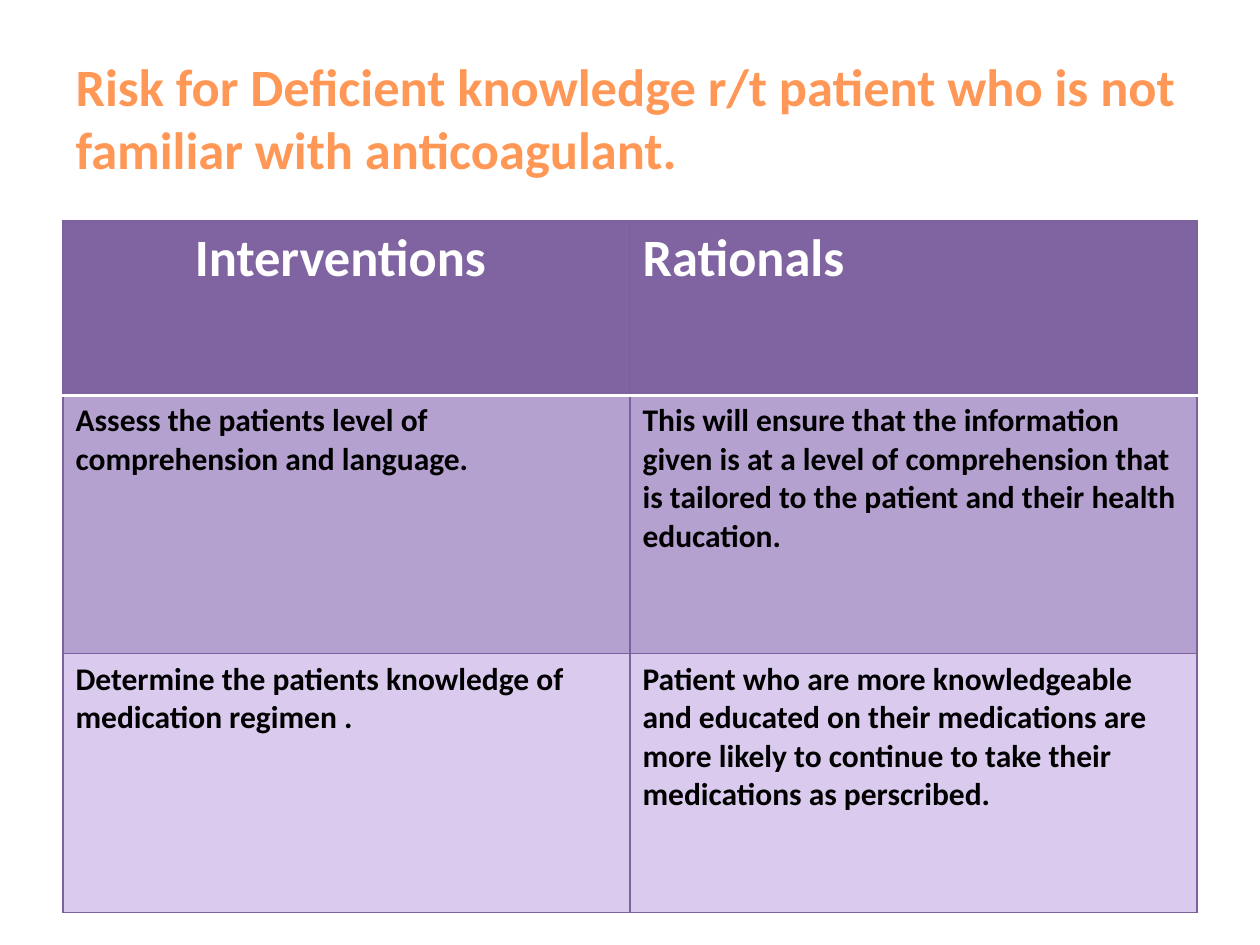
from lxml import etree
from pptx import Presentation
from pptx.dml.color import RGBColor
from pptx.enum.text import MSO_ANCHOR, PP_ALIGN
from pptx.oxml.ns import qn
from pptx.util import Inches, Pt

LEFT, CENTER = PP_ALIGN.LEFT, PP_ALIGN.CENTER
MIDDLE = MSO_ANCHOR.MIDDLE
TITLE_ONLY = 5

ORANGE = RGBColor(0xFF, 0x98, 0x56)
PURPLE = RGBColor(0x80, 0x64, 0xA2)
MID_PURPLE = RGBColor(0xB5, 0xA1, 0xD0)
PALE_PURPLE = RGBColor(0xD9, 0xCA, 0xEE)
BORDER_PURPLE = RGBColor(0x7D, 0x60, 0xA0)
WHITE = RGBColor(0xFF, 0xFF, 0xFF)
BLACK = RGBColor(0, 0, 0)

HEADING = {"name": "Calibri", "size": Pt(30), "bold": True}
BODY = {"name": "Calibri", "size": Pt(18), "bold": True}

THIN = (BORDER_PURPLE, 0.75)
RULE = (WHITE, 2)

ROWS = [
    ("Interventions ", "Rationals"),
    ("Assess the patients level of comprehension and language.",
     "This will ensure that the information given is at a level of comprehension "
     "that is tailored to the patient and their health education."),
    ("Determine the patients knowledge of medication regimen .",
     "Patient who are more knowledgeable and educated on their medications are "
     "more likely to continue to take their medications as perscribed."),
]
ROW_FILLS = [PURPLE, MID_PURPLE, PALE_PURPLE]
ROW_HEIGHTS = [1.39, 2.05, 2.05]


class SlideBuilder:
    """Holds the style and the current slide; places items by shares of its size."""

    def __init__(self, presentation):
        self.width = presentation.slide_width
        self.height = presentation.slide_height
        self.slide = presentation.slides.add_slide(
            presentation.slide_layouts[TITLE_ONLY])

    def box(self, left, top, width, height):
        return (int(left * self.width), int(top * self.height),
                int(width * self.width), int(height * self.height))

    def add_text(self, text_frame, text, style, color, alignment=LEFT):
        text_frame.word_wrap = True
        paragraph = text_frame.paragraphs[0]
        paragraph.alignment = alignment
        run = paragraph.add_run()
        run.text = text
        for attribute, value in style.items():
            setattr(run.font, attribute, value)
        run.font.color.rgb = color

    def title(self, text, *shares):
        shape = self.slide.shapes.title
        shape.left, shape.top, shape.width, shape.height = self.box(*shares)
        shape.text_frame.vertical_anchor = MIDDLE
        self.add_text(shape.text_frame, text, HEADING, ORANGE)

    def border(self, cell, side, color, points):
        properties = cell._tc.get_or_add_tcPr()
        line = etree.SubElement(properties, qn(f"a:ln{side}"), w=str(Pt(points)))
        fill = etree.SubElement(line, qn("a:solidFill"))
        etree.SubElement(fill, qn("a:srgbClr"), val=str(color))

    def table(self, rows, fills, heights, *shares):
        frame = self.slide.shapes.add_table(
            len(rows), len(rows[0]), *self.box(*shares))
        table = frame.table
        table.horz_banding = False
        for row_index, texts in enumerate(rows):
            table.rows[row_index].height = Inches(heights[row_index])
            header = row_index == 0
            # The header meets the body at a white rule
            borders = {"L": THIN, "R": THIN,
                       "T": RULE if row_index == 1 else THIN,
                       "B": RULE if header else THIN}
            for column_index, text in enumerate(texts):
                cell = table.cell(row_index, column_index)
                for side, (color, points) in borders.items():
                    self.border(cell, side, color, points)
                cell.fill.solid()
                cell.fill.fore_color.rgb = fills[row_index]
                centered = header and column_index == 0
                self.add_text(cell.text_frame, text,
                              HEADING if header else BODY,
                              WHITE if header else BLACK,
                              CENTER if centered else LEFT)


def main():
    presentation = Presentation()
    presentation.slide_width = Inches(10)
    presentation.slide_height = Inches(7.5)
    builder = SlideBuilder(presentation)

    # Diagnosis
    builder.title("Risk for Deficient knowledge r/t patient who is not "
                  "familiar with anticoagulant.",
                  0.05, 0.04, 0.9, 1 / 6)

    # Interventions with their reasons
    builder.table(ROWS, ROW_FILLS, ROW_HEIGHTS, 0.05, 7 / 30, 0.9, 11 / 15)

    presentation.save("out.pptx")


if __name__ == "__main__":
    main()
